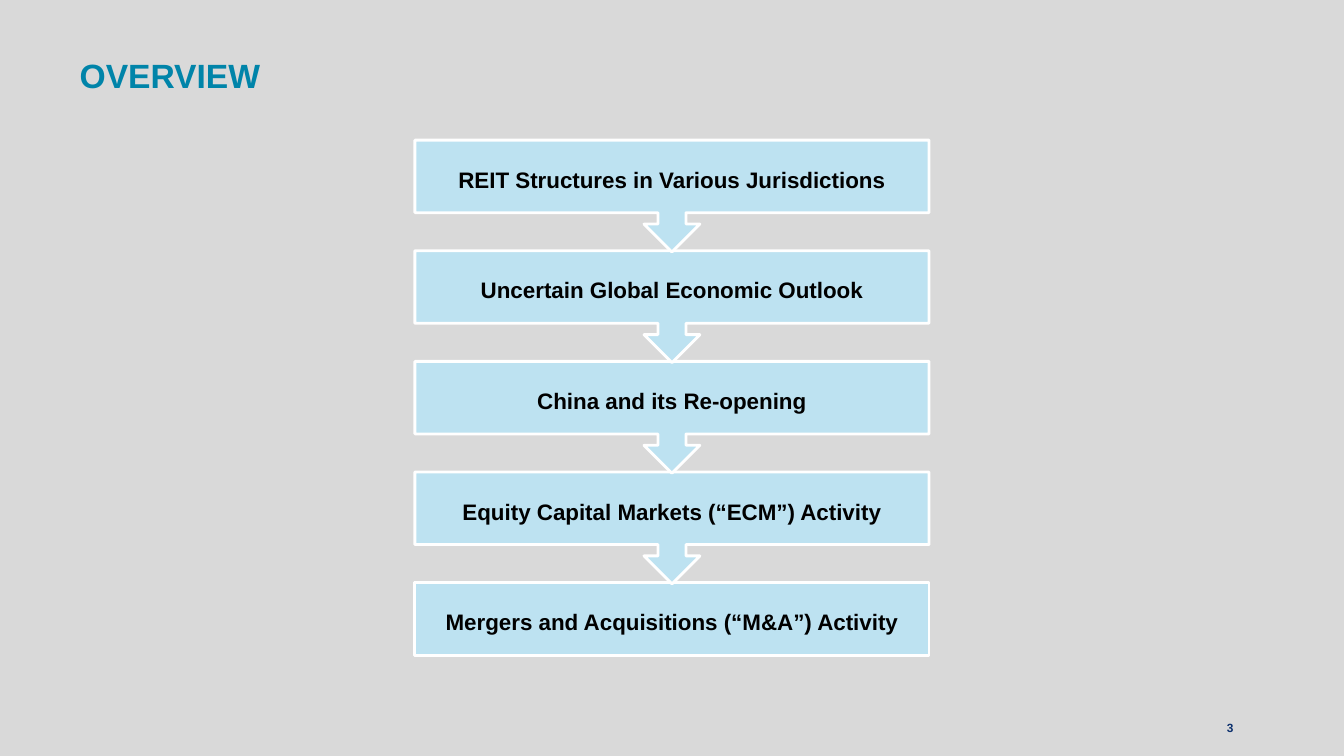
from pptx import Presentation
from pptx.dml.color import RGBColor
from pptx.enum.shapes import MSO_SHAPE
from pptx.enum.text import MSO_ANCHOR, PP_ALIGN
from pptx.util import Inches, Pt

TITLE = "OVERVIEW"
TOPICS = [
    "REIT Structures in Various Jurisdictions",
    "Uncertain Global Economic Outlook",
    "China and its Re-opening",
    "Equity Capital Markets (“ECM”) Activity",
    "Mergers and Acquisitions (“M&A”) Activity",
]
PAGE_NUMBER = "3"

GREY = RGBColor(0xD9, 0xD9, 0xD9)
TEAL = RGBColor(0x00, 0x84, 0xA9)
PALE_BLUE = RGBColor(0xBD, 0xE2, 0xF1)
WHITE = RGBColor(0xFF, 0xFF, 0xFF)
BLACK = RGBColor(0x00, 0x00, 0x00)
NAVY = RGBColor(0x0D, 0x31, 0x6E)

SLIDE_W, SLIDE_H = 13.33, 7.5
BOX_W, BOX_H, CALLOUT_H = 5.1, 0.72, 1.11
FIRST_TOP, LAST_TOP = 1.39, 5.78
BOX_LEFT = (SLIDE_W - BOX_W) / 2
PITCH = (LAST_TOP - FIRST_TOP) / (len(TOPICS) - 1)


def write(shape, text, size, color):
    tf = shape.text_frame
    tf.word_wrap = True
    p = tf.paragraphs[0]
    p.text = text
    font = p.runs[0].font
    font.name, font.size, font.bold = "Arial", Pt(size), True
    font.color.rgb = color
    return tf


def set_margins(tf, left, top, right, bottom):
    tf.margin_left, tf.margin_top = Inches(left), Inches(top)
    tf.margin_right, tf.margin_bottom = Inches(right), Inches(bottom)


def add_text(slide, text, left, top, width, height, size, color):
    box = slide.shapes.add_textbox(
        Inches(left), Inches(top), Inches(width), Inches(height))
    return write(box, text, size, color)


def add_step(slide, index, topic):
    """Add one box of the flow; every box but the last points down."""
    is_last = index == len(TOPICS) - 1
    kind = MSO_SHAPE.RECTANGLE if is_last else MSO_SHAPE.DOWN_ARROW_CALLOUT
    height = BOX_H if is_last else CALLOUT_H
    sp = slide.shapes.add_shape(
        kind, Inches(BOX_LEFT), Inches(FIRST_TOP + index * PITCH),
        Inches(BOX_W), Inches(height))
    sp.shadow.inherit = False
    sp.fill.solid()
    sp.fill.fore_color.rgb = PALE_BLUE
    sp.line.color.rgb = WHITE
    sp.line.width = Pt(2)
    if not is_last:
        sp.adjustments[3] = BOX_H / CALLOUT_H
    tf = write(sp, topic, 16, BLACK)
    set_margins(tf, 0.12, 0.12, 0.12, 0.12)
    tf.vertical_anchor = MSO_ANCHOR.MIDDLE
    tf.paragraphs[0].alignment = PP_ALIGN.CENTER
    tf.paragraphs[0].line_spacing = 1.21


def main():
    prs = Presentation()
    prs.slide_width, prs.slide_height = Inches(SLIDE_W), Inches(SLIDE_H)
    slide = prs.slides.add_slide(prs.slide_layouts[6])
    slide.background.fill.solid()
    slide.background.fill.fore_color.rgb = GREY

    title = add_text(slide, TITLE, 0.79, 0.54, 11.76, 0.52, 24, TEAL)
    set_margins(title, 0, 0, 0, 0.12)
    title.vertical_anchor = MSO_ANCHOR.MIDDLE

    # Bottom step first, so that each arrow tip lies over the box below it
    for index, topic in reversed(list(enumerate(TOPICS))):
        add_step(slide, index, topic)

    add_text(slide, PAGE_NUMBER, 12.07, 7.1, 0.47, 0.14, 8.5, NAVY)
    prs.save("out.pptx")


if __name__ == "__main__":
    main()
